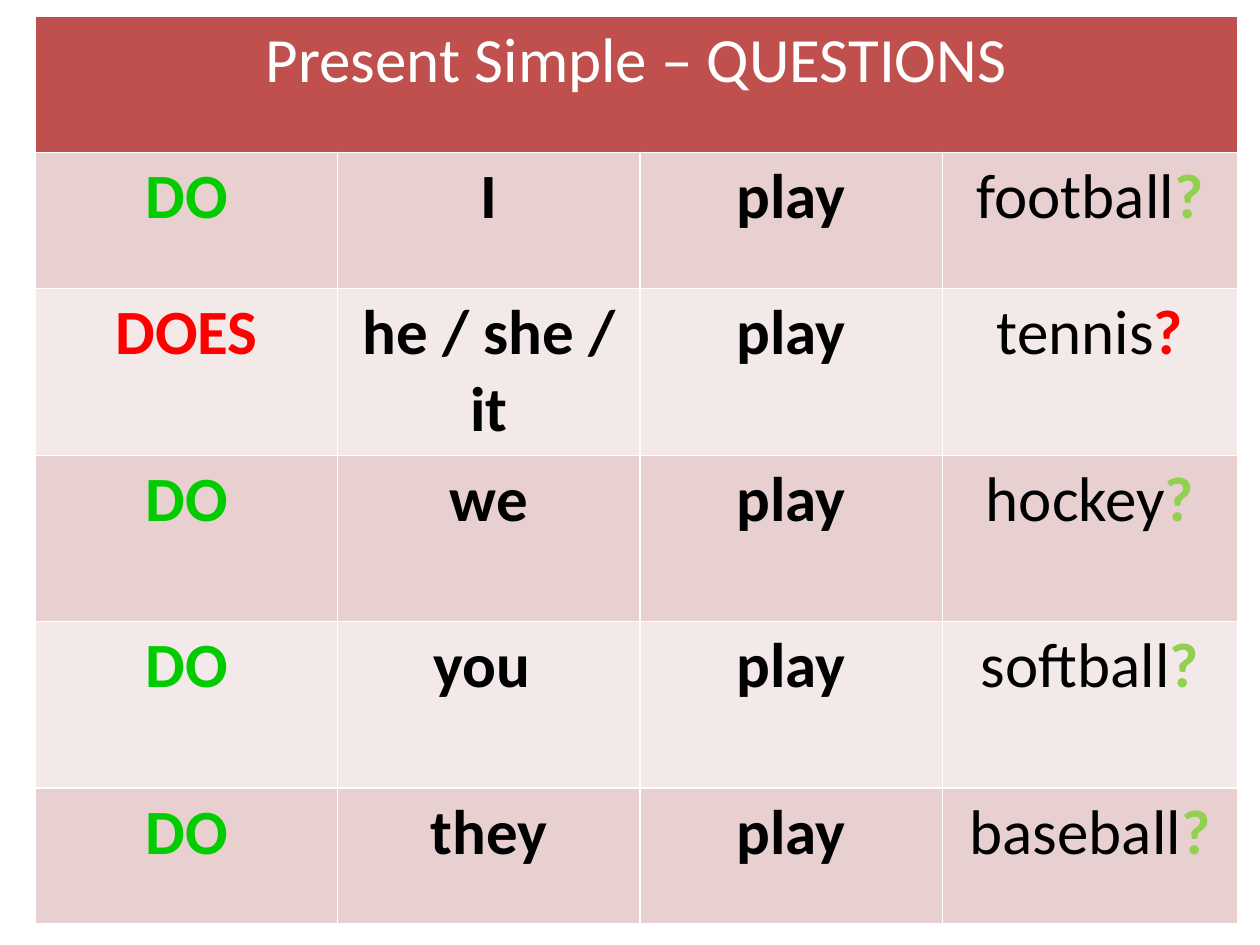
import dataclasses

import pptx
import pptx.dml.color
import pptx.enum.text
import pptx.util

Inches = pptx.util.Inches


@dataclasses.dataclass(frozen=True)
class Theme:
    """Colours, font and type size of the slide."""
    font: str = "Calibri"
    size: int = 36
    head: str = "C0504D"
    bands: tuple = ("E8D0D0", "F4E9E9")
    white: str = "FFFFFF"
    black: str = "000000"
    green: str = "00CC00"
    lime: str = "92D050"
    red: str = "FF0000"


THEME = Theme()
TITLE = "Present Simple – QUESTIONS"
ROWS = [
    ("DO", "I", "football"),
    ("DOES", "he / she / it", "tennis"),
    ("DO", "we", "hockey"),
    ("DO", "you ", "softball"),
    ("DO", "they", "baseball"),
]
WIDTHS = (2.4, 2.4, 2.4, 2.34)
HEIGHTS = (1.08, 1.08, 1.32, 1.32, 1.32, 1.08)


def rgb(code):
    """Turn a hex code into a colour."""
    return pptx.dml.color.RGBColor.from_string(code)


def style(run, color, bold):
    """Format one run of text."""
    run.font.name = THEME.font
    run.font.size = pptx.util.Pt(THEME.size)
    run.font.color.rgb = rgb(color)
    run.font.bold = bold


def fill_cell(cell, fill, *parts):
    """Fill a cell and write its (text, colour, bold) parts, centred."""
    cell.fill.solid()
    cell.fill.fore_color.rgb = rgb(fill)
    para = cell.text_frame.paragraphs[0]
    para.alignment = pptx.enum.text.PP_ALIGN.CENTER
    for text, color, bold in parts:
        run = para.add_run()
        run.text = text
        style(run, color, bold)


def add_grid(slide):
    """Add the table with its column widths and row heights."""
    frame = slide.shapes.add_table(
        len(HEIGHTS), len(WIDTHS), Inches(0.28), Inches(0.13),
        Inches(sum(WIDTHS)), Inches(sum(HEIGHTS)))
    grid = frame.table
    for col, width in zip(grid.columns, WIDTHS):
        col.width = Inches(width)
    for row, height in zip(grid.rows, HEIGHTS):
        row.height = Inches(height)
    return grid


def add_head(grid):
    """Merge the first row and write the heading."""
    cell = grid.cell(0, 0)
    cell.merge(grid.cell(0, len(WIDTHS) - 1))
    fill_cell(cell, THEME.head, (TITLE, THEME.white, False))


def add_row(grid, index, verb, subject, sport):
    """Write one question across a banded row."""
    band = THEME.bands[(index - 1) % 2]
    does = verb == "DOES"
    cells = (
        [(verb, THEME.red if does else THEME.green, True)],
        [(subject, THEME.black, True)],
        [("play", THEME.black, True)],
        [(sport, THEME.black, False),
         ("?", THEME.red if does else THEME.lime, True)],
    )
    for col, parts in enumerate(cells):
        fill_cell(grid.cell(index, col), band, *parts)


def main():
    """Build and save the slide."""
    deck = pptx.Presentation()
    deck.slide_width, deck.slide_height = Inches(10), Inches(7.5)
    slide = deck.slides.add_slide(deck.slide_layouts[6])
    grid = add_grid(slide)
    add_head(grid)
    for index, row in enumerate(ROWS, 1):
        add_row(grid, index, *row)
    deck.save("out.pptx")


if __name__ == "__main__":
    main()
